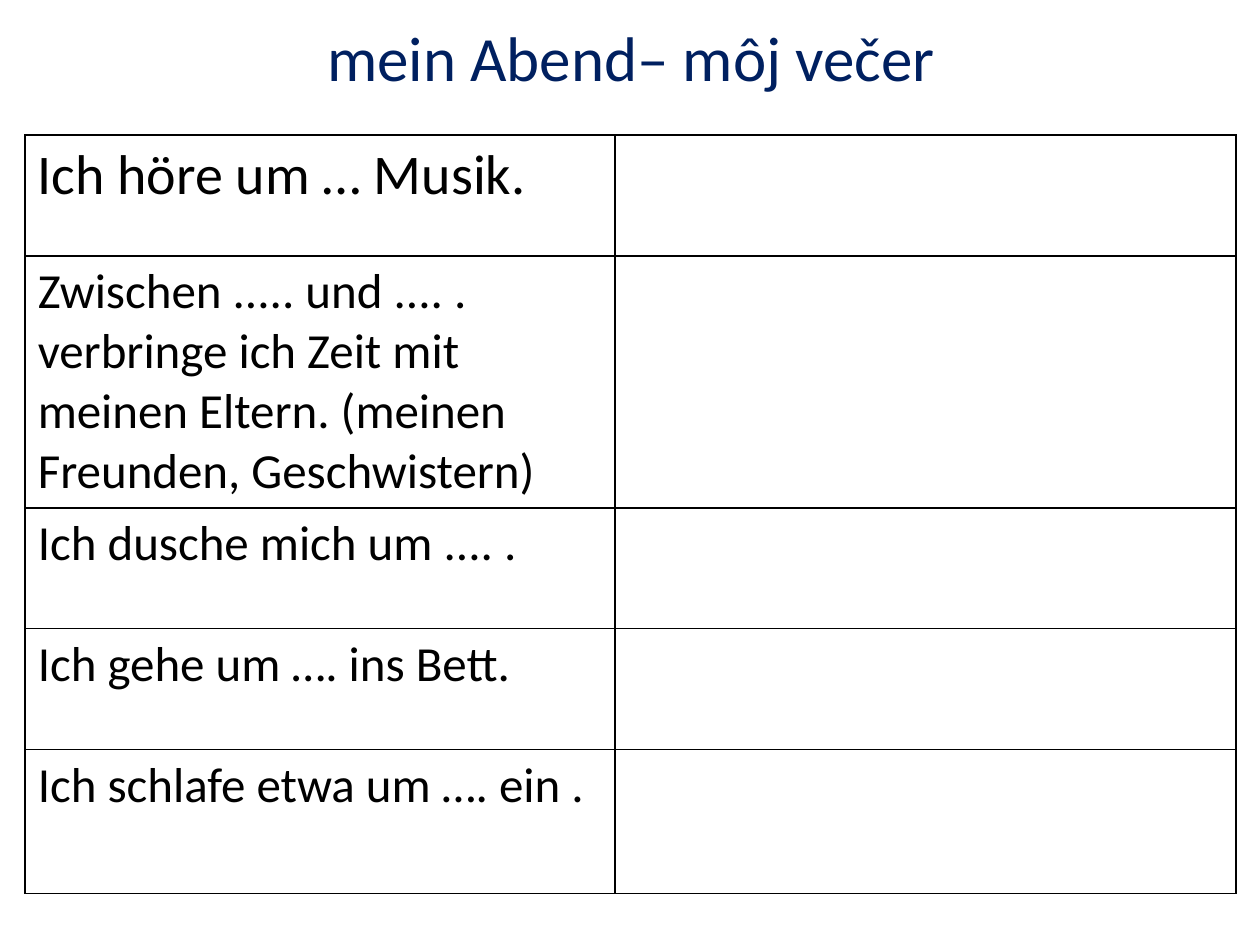
from lxml import etree
from pptx import Presentation
from pptx.dml.color import RGBColor
from pptx.enum.text import MSO_ANCHOR, PP_ALIGN
from pptx.oxml.ns import qn
from pptx.util import Inches, Pt

LEFT, CENTER = PP_ALIGN.LEFT, PP_ALIGN.CENTER
TOP, MIDDLE = MSO_ANCHOR.TOP, MSO_ANCHOR.MIDDLE

WIDTH, HEIGHT = 10, 7.5
FONT = "Calibri"
COLORS = {"title": "002060", "text": "000000", "border": "000000", "paper": "FFFFFF"}

TITLE_BOX = (0.51, 0.13, 9, 0.63)
TABLE_BOX = (0.2, 1.07, 9.61, 6.02)
COLUMN_WIDTHS = (4.68, 4.93)
ROW_HEIGHTS = (0.96, 2, 0.96, 0.96, 1.14)

# Sentences of each row with their text size; the right column stays free
SENTENCES = [
    (["Ich höre um … Musik."], 32),
    (["Zwischen ..... und .... .",
      "verbringe ich Zeit mit meinen Eltern. (meinen Freunden, Geschwistern)"], 28),
    (["Ich dusche mich um .... ."], 28),
    (["Ich gehe um …. ins Bett."], 28),
    (["Ich schlafe etwa um …. ein ."], 28),
]


def write(frame, lines, size, color="text", align=LEFT):
    frame.word_wrap = True
    for index, line in enumerate(lines):
        paragraph = frame.paragraphs[0] if index == 0 else frame.add_paragraph()
        paragraph.alignment = align
        run = paragraph.add_run()
        run.text = line
        run.font.name = FONT
        run.font.size = Pt(size)
        run.font.color.rgb = RGBColor.from_string(COLORS[color])


def style_cell(cell):
    # Borders come before the fill in the cell properties
    properties = cell._tc.get_or_add_tcPr()
    for side in ("lnL", "lnR", "lnT", "lnB"):
        border = etree.SubElement(properties, qn(f"a:{side}"), w=str(Pt(1)))
        fill = etree.SubElement(border, qn("a:solidFill"))
        etree.SubElement(fill, qn("a:srgbClr"), val=COLORS["border"])
    cell.fill.solid()
    cell.fill.fore_color.rgb = RGBColor.from_string(COLORS["paper"])
    cell.vertical_anchor = TOP


def add_title(slide, box, title):
    frame = slide.shapes.add_textbox(*map(Inches, box)).text_frame
    frame.vertical_anchor = MIDDLE
    write(frame, [title], 36, color="title", align=CENTER)


def add_sentence_table(slide, box, sentences):
    left, top, width, height = box
    table = slide.shapes.add_table(
        len(sentences), len(COLUMN_WIDTHS), *map(Inches, box)).table
    table.first_row = table.horz_banding = False

    # Columns and rows share out the box
    for column, share in zip(table.columns, COLUMN_WIDTHS):
        column.width = Inches(width * share / sum(COLUMN_WIDTHS))
    for row, share in zip(table.rows, ROW_HEIGHTS):
        row.height = Inches(height * share / sum(ROW_HEIGHTS))

    for cell in table.iter_cells():
        style_cell(cell)
    for index, (lines, size) in enumerate(sentences):
        write(table.cell(index, 0).text_frame, lines, size)


def main():
    deck = Presentation()
    deck.slide_width, deck.slide_height = Inches(WIDTH), Inches(HEIGHT)
    slide = deck.slides.add_slide(deck.slide_layouts[6])
    add_title(slide, TITLE_BOX, "mein Abend– môj večer")
    add_sentence_table(slide, TABLE_BOX, SENTENCES)
    deck.save("out.pptx")


if __name__ == "__main__":
    main()
